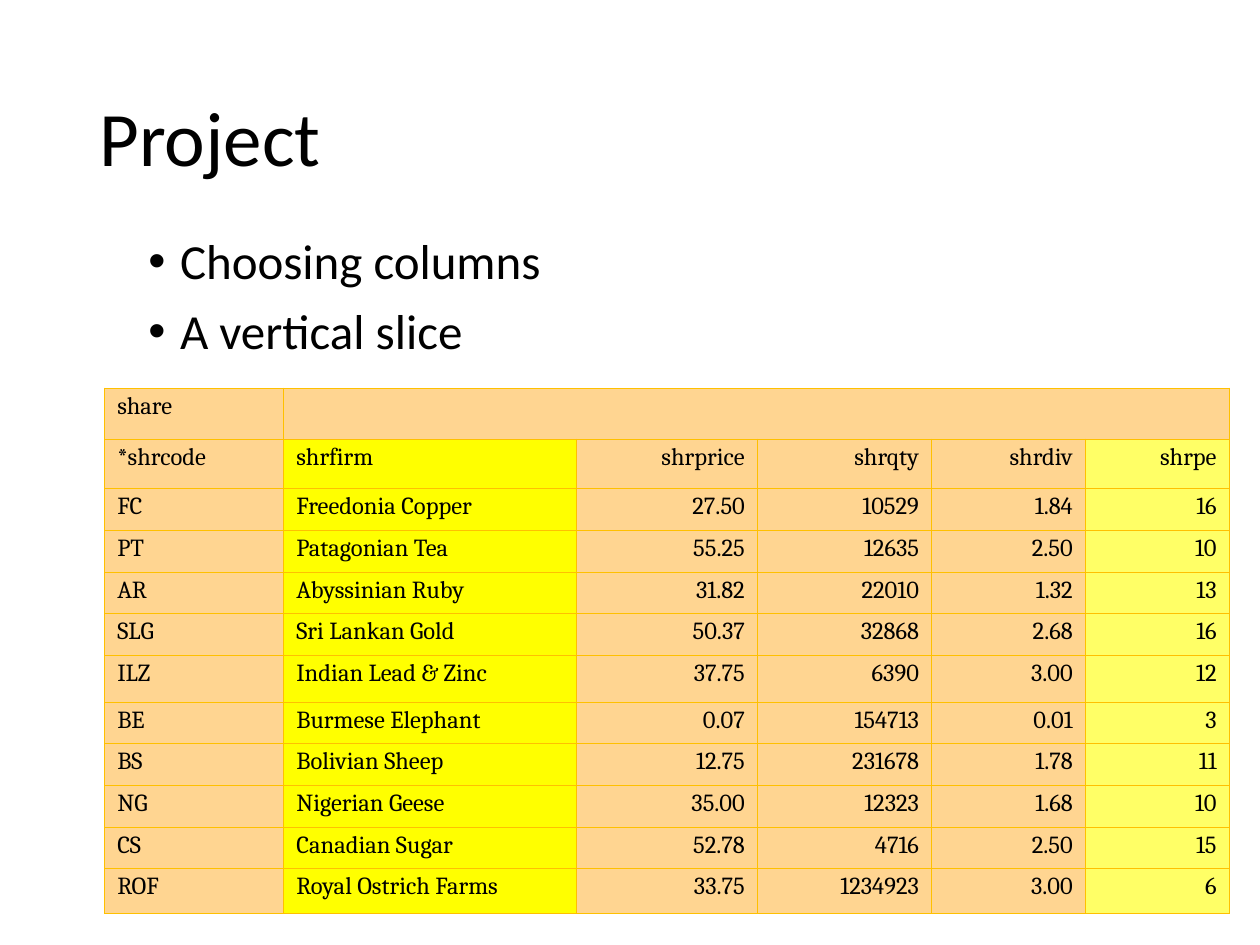
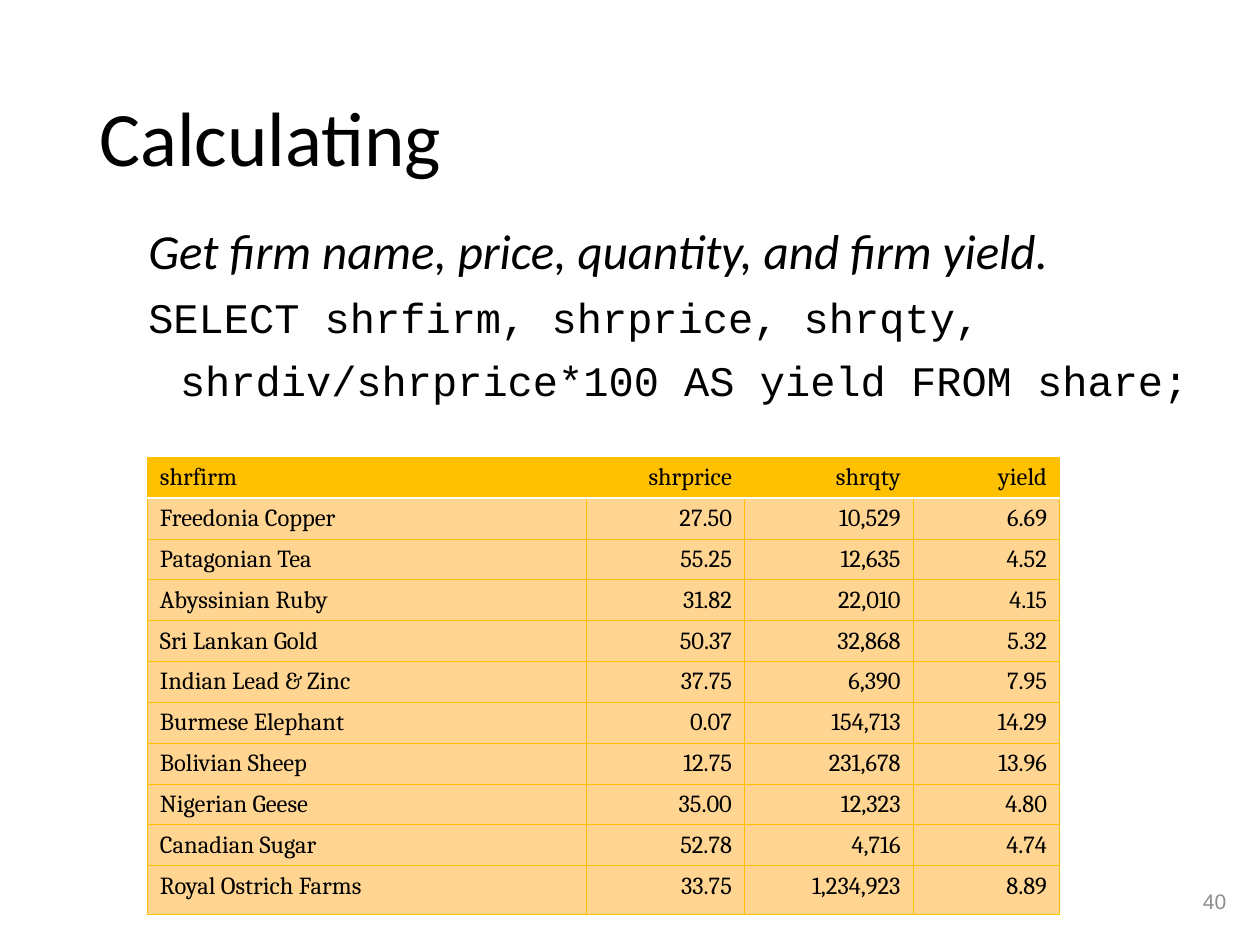
from dataclasses import dataclass

from lxml import etree
from pptx import Presentation
from pptx.dml.color import RGBColor
from pptx.enum import text
from pptx.oxml import ns
from pptx.util import Cm, Pt


@dataclass(frozen=True)
class Theme:
    black: str = "000000"
    white: str = "FFFFFF"
    grey: str = "8C8C8C"
    gold: str = "FFC000"
    peach: str = "FFD591"
    yellow: str = "FFFF00"
    lemon: str = "FFFF66"
    sans: str = "Calibri"
    serif: str = "Cambria"
    mono: str = "Courier New"
    plain: str = "Arial"
    head: int = 44
    body: int = 28
    code: int = 24
    cell: int = 14
    foot: int = 12


T = Theme()
LEFT, RIGHT = text.PP_ALIGN.LEFT, text.PP_ALIGN.RIGHT
TOP, MIDDLE = text.MSO_ANCHOR.TOP, text.MSO_ANCHOR.MIDDLE
PAGE = (25.4, 19.05)
TITLE_BOX = (1.75, 1.02, 21.89, 3.68)
PAGE_BOX = (19.25, 17.65, 5.72, 1.02)

# Share data: code, firm, price, quantity, dividend, PE ratio
SHARES = [
    ("FC", "Freedonia Copper", 27.50, 10529, 1.84, 16),
    ("PT", "Patagonian Tea", 55.25, 12635, 2.50, 10),
    ("AR", "Abyssinian Ruby", 31.82, 22010, 1.32, 13),
    ("SLG", "Sri Lankan Gold", 50.37, 32868, 2.68, 16),
    ("ILZ", "Indian Lead & Zinc", 37.75, 6390, 3.00, 12),
    ("BE", "Burmese Elephant", 0.07, 154713, 0.01, 3),
    ("BS", "Bolivian Sheep", 12.75, 231678, 1.78, 11),
    ("NG", "Nigerian Geese", 35.00, 12323, 1.68, 10),
    ("CS", "Canadian Sugar", 52.78, 4716, 2.50, 15),
    ("ROF", "Royal Ostrich Farms", 33.75, 1234923, 3.00, 6),
]


def put(item, **vals):
    for name, val in vals.items():
        setattr(item, name, val)


def write(para, words, size, face, color=T.black, italic=False, **form):
    run = para.add_run()
    run.text = words
    put(run.font, size=Pt(size), name=face, bold=False, italic=italic)
    run.font.color.rgb = RGBColor.from_string(color)
    put(para, **form)


def place(shape, box, anchor=TOP):
    put(shape, **dict(zip(("left", "top", "width", "height"), map(Cm, box))))
    frame = shape.text_frame
    put(frame, word_wrap=True, auto_size=text.MSO_AUTO_SIZE.NONE,
        vertical_anchor=anchor)
    return frame


def add_text(slide, box, anchor=TOP):
    return place(slide.shapes.add_textbox(0, 0, 0, 0), box, anchor)


def add_slide(deck, title):
    slide = deck.slides.add_slide(deck.slide_layouts[5])
    frame = place(slide.shapes.title, TITLE_BOX, MIDDLE)
    write(frame.paragraphs[0], title, T.head, T.sans,
          alignment=LEFT, line_spacing=0.9)
    return slide


# Body lines are (words, size, face, italic, left margin, indent, bullet)
def add_body(slide, box, lines):
    frame = add_text(slide, box)
    for i, (words, size, face, italic, margin, indent, dot) in enumerate(lines):
        para = frame.add_paragraph() if i else frame.paragraphs[0]
        write(para, words, size, face, italic=italic,
              line_spacing=0.9, space_before=Pt(10))
        props = para._p.get_or_add_pPr()
        props.set("marL", str(Cm(margin)))
        props.set("indent", str(Cm(indent)))
        if dot:
            etree.SubElement(props, ns.qn("a:buFont"), typeface="Arial")
            etree.SubElement(props, ns.qn("a:buChar"), char="•")


def add_page(slide, num):
    frame = add_text(slide, PAGE_BOX, MIDDLE)
    write(frame.paragraphs[0], num, T.foot, T.plain, T.grey, alignment=RIGHT)


def edge(cell, sides):
    props = cell._tc.get_or_add_tcPr()
    for side in "LRTB":
        color, width = sides.get(side, (T.gold, 0.5))
        line = etree.SubElement(props, ns.qn(f"a:ln{side}"), w=str(Pt(width)))
        fill = etree.SubElement(line, ns.qn("a:solidFill"))
        etree.SubElement(fill, ns.qn("a:srgbClr"), val=color)


def add_grid(slide, spot, cols, highs, rows, texts, fill, sides, space):
    """Columns from index `texts` on hold numbers and align right."""
    grid = slide.shapes.add_table(
        len(rows), len(cols), *map(Cm, (*spot, sum(cols), sum(highs)))).table
    put(grid, first_row=False, horz_banding=False)
    for col, wide in zip(grid.columns, cols):
        col.width = Cm(wide)
    for r, (row, high) in enumerate(zip(rows, highs)):
        grid.rows[r].height = Cm(high)
        for c, words in enumerate(row):
            cell = grid.cell(r, c)
            edge(cell, sides(r))
            cell.fill.solid()
            cell.fill.fore_color.rgb = RGBColor.from_string(fill(r, c))
            if words:
                write(cell.text_frame.paragraphs[0], words, T.cell, T.serif,
                      alignment=RIGHT if c >= texts else LEFT,
                      line_spacing=space)
    return grid


def project(deck):
    slide = add_slide(deck, "Project")
    add_body(slide, (2.74, 4.65, 21.59, 11), [
        (words, T.body, T.sans, False, 0.64, -0.64, True)
        for words in ("Choosing columns", "A vertical slice")])

    # Table with the two chosen columns marked
    rows = [("share",) + ("",) * 5,
            ("*shrcode", "shrfirm", "shrprice", "shrqty", "shrdiv", "shrpe")]
    rows += [(code, firm, f"{price:.2f}", str(qty), f"{div:.2f}", str(ratio))
             for code, firm, price, qty, div, ratio in SHARES]
    marks = {1: T.yellow, 5: T.lemon}
    highs = [0.91, 1.0] + [0.84] * 4 + [0.94] + [0.84] * 4 + [0.91]
    grid = add_grid(slide, (2.11, 7.82), (3.61, 5.89, 3.66, 3.51, 3.1, 2.9),
                    highs, rows, 2,
                    lambda r, c: marks.get(c, T.peach) if r else T.peach,
                    lambda r: {}, 0.88)
    grid.cell(0, 1).merge(grid.cell(0, 5))


def calc(deck):
    slide = add_slide(deck, "Calculating")
    add_body(slide, (2.74, 4.45, 21.59, 11.23), [
        ("Get firm name, price, quantity, and firm yield.",
         T.body, T.sans, True, 0.64, -0.64, False),
        ("SELECT shrfirm, shrprice, shrqty,",
         T.code, T.mono, False, 0.64, -0.64, False),
        ("shrdiv/shrprice*100 AS yield FROM share;",
         T.code, T.mono, False, 0.64, 0, False)])
    add_page(slide, "40")

    # Result of the query, with a white rule under its header
    rows = [("shrfirm", "shrprice", "shrqty", "yield")]
    rows += [(firm, f"{price:.2f}", f"{qty:,}", f"{div / price * 100:.2f}")
             for _, firm, price, qty, div, _ in SHARES]
    rule = {0: {"B": (T.white, 1)}, 1: {"T": (T.white, 1)}}
    add_grid(slide, (2.97, 9.22), (8.86, 3.18, 3.4, 2.95),
             [0.82] * 10 + [0.99], rows, 1,
             lambda r, c: T.peach if r else T.gold,
             lambda r: rule.get(r, {}), 1.0)


def main():
    deck = Presentation()
    deck.slide_width, deck.slide_height = map(Cm, PAGE)
    project(deck)
    calc(deck)
    deck.save("out.pptx")


if __name__ == "__main__":
    main()
